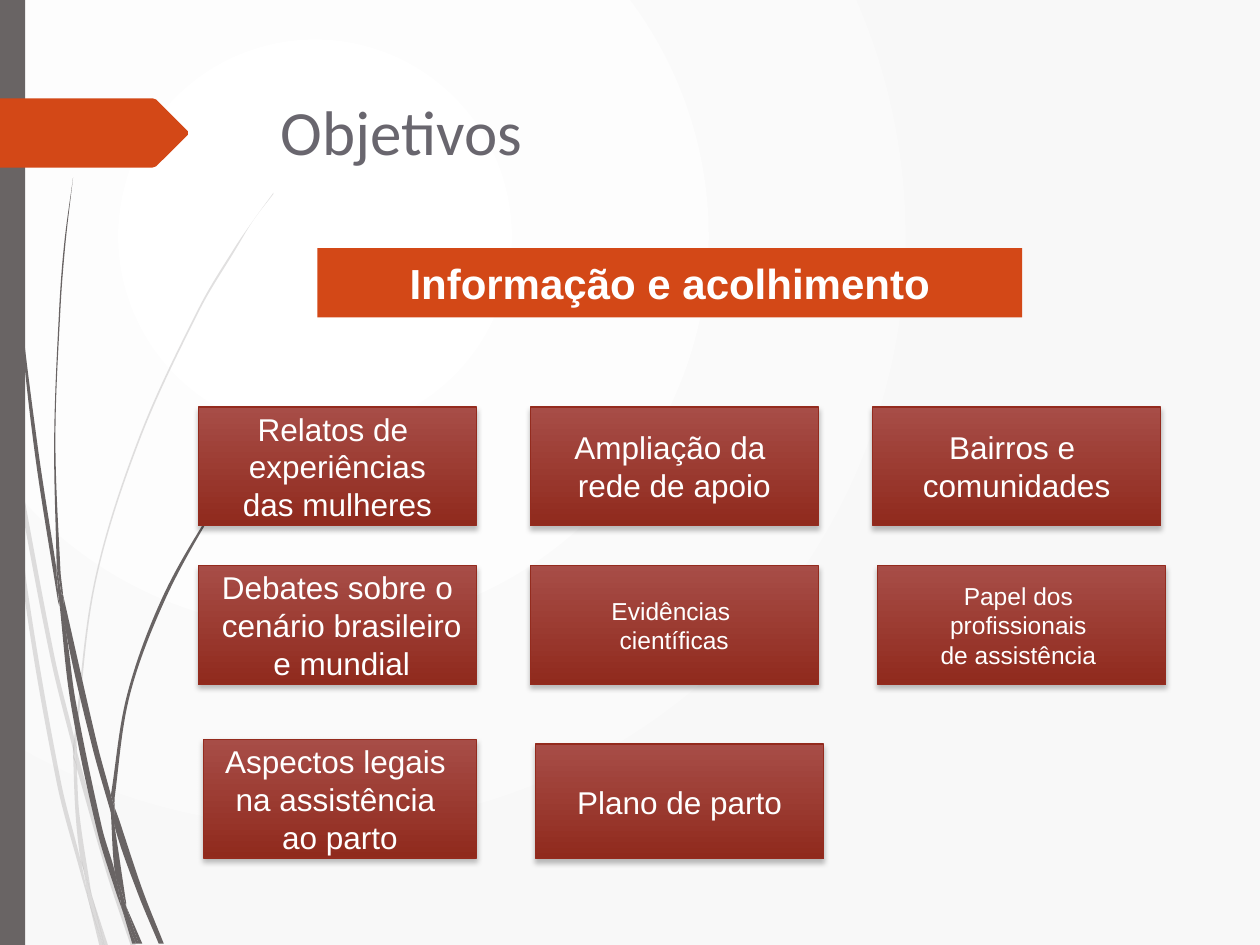
from dataclasses import dataclass

from lxml.etree import SubElement
from pptx import Presentation
from pptx.dml.color import RGBColor
from pptx.enum.shapes import MSO_SHAPE
from pptx.enum.text import MSO_ANCHOR, PP_ALIGN
from pptx.oxml.ns import qn
from pptx.util import Pt

COLORS = {
    "white": "FFFFFF", "mist": "F8F8F8", "gray": "696464", "orange": "D34817",
    "rose": "A74D47", "wine": "902A1D", "edge": "942B1E", "title": "69666E",
    "black": "000000",
}
UNIT = Pt(0.72)  # one outline step

Edge = list[tuple[int, int]]


@dataclass
class Card:
    left: float
    top: float
    width: float
    height: float
    text: str
    size: int = 18


# Each blade of grass is a pair of smooth edges, there and back
PALE: list[list[Edge]] = [
    [[(8, 350), (6, 322), (0, 282)], [(0, 299), (7, 344), (8, 350)]],
    [[(12, 376), (40, 522), (59, 599)], [(59, 586), (43, 520), (10, 345)]],
    [[(61, 610), (85, 694), (104, 751)], [(108, 751), (88, 692), (64, 607), (61, 596)]],
    [[(73, 711), (83, 751)], [(86, 751), (73, 711)]],
    [[(8, 350), (19, 470), (45, 621), (64, 693), (70, 714)],
     [(69, 707), (64, 683), (48, 619), (22, 469), (12, 376), (8, 350)]],
    [[(58, 599), (60, 646), (64, 683), (67, 692), (73, 711)],
     [(72, 706), (63, 646), (61, 610), (61, 608), (58, 599)]],
    [[(61, 596), (61, 584), (76, 462), (111, 349), (159, 245), (187, 198), (201, 175),
      (217, 154)],
     [(217, 153), (201, 175), (186, 197), (158, 244), (110, 348), (75, 461), (59, 584),
      (59, 586)]],
    [[(70, 714), (79, 751)], [(82, 751), (70, 714)]],
    [[(59, 586), (58, 599), (61, 608)], [(61, 610), (61, 596), (59, 586)]],
    [[(65, 683), (69, 707), (70, 714), (82, 751)], [(83, 751), (73, 711), (67, 692)]],
]
DARK: list[list[Edge]] = [
    [[(2, 0), (3, 48), (5, 110), (14, 233), (27, 355), (46, 477), (47, 481)],
     [(45, 457), (45, 453), (30, 355), (15, 232), (6, 109), (4, 48), (3, 0)]],
    [[(50, 472), (53, 505), (73, 592), (88, 645)],
     [(88, 633), (88, 631), (77, 590), (50, 472)]],
    [[(91, 641), (91, 656), (109, 708), (126, 749)],
     [(130, 749), (113, 706), (94, 649), (91, 641)]],
    [[(47, 477), (56, 557), (77, 659), (92, 708), (97, 722)],
     [(96, 717), (91, 691), (81, 657), (60, 556), (53, 505), (47, 477)]],
    [[(45, 449), (43, 349), (47, 245), (51, 193), (58, 141)],
     [(58, 141), (52, 193), (48, 245), (44, 349), (48, 453), (50, 472), (49, 472)]],
    [[(100, 719), (110, 749)], [(113, 749), (100, 719)]],
    [[(45, 449), (45, 453), (47, 477), (53, 505)], [(50, 472), (49, 472), (45, 449)]],
    [[(91, 641), (91, 633), (103, 552), (131, 476), (169, 406), (191, 374), (203, 359),
      (216, 344)],
     [(215, 344), (203, 358), (191, 373), (168, 405), (129, 474), (101, 551), (88, 631)]],
    [[(97, 722), (105, 749)], [(108, 749), (97, 722)]],
    [[(88, 645), (91, 691), (96, 706), (100, 719)],
     [(100, 716), (91, 656), (90, 651), (88, 645)]],
    [[(88, 631), (88, 645), (91, 656)], [(91, 641), (88, 631)]],
    [[(91, 691), (96, 717), (97, 722), (108, 749)],
     [(110, 749), (100, 719), (96, 706), (91, 691)]],
]
ARROW: list[Edge] = [
    [(0, 78), (121, 78)], [(124, 79), (149, 104)],
    [(149, 107), (124, 132)], [(121, 133), (0, 133)],
]

ROWS = (232.5, 323.3)
COLS = (113.4, 303, 498.6)
SLIM, WIDE, HIGH = 158.8, 164.6, 67.9
CARDS = [
    Card(COLS[2], ROWS[0], WIDE, HIGH, "Bairros e \ncomunidades"),
    Card(COLS[1], ROWS[0], WIDE, HIGH, "Ampliação da \nrede de apoio"),
    Card(COLS[0], ROWS[1], SLIM, HIGH, "Debates sobre o\n cenário brasileiro\n e mundial"),
    Card(COLS[1], ROWS[1], WIDE, HIGH, "Evidências \ncientíficas", 14),
    Card(501.6, ROWS[1], WIDE, HIGH, "Papel dos \nprofissionais \nde assistência ", 14),
    Card(116.2, 422.4, 156, HIGH, "Aspectos legais \nna assistência \nao parto"),
    Card(COLS[0], ROWS[0], SLIM, HIGH, "Relatos de \nexperiências\ndas mulheres"),
    Card(306, 425.2, WIDE, 65.5, "Plano de parto"),
]


def tint(name: str) -> RGBColor:
    return RGBColor.from_string(COLORS[name])


def blend(fill, first: str, last: str) -> None:
    fill.gradient()
    for stop, name in zip(fill.gradient_stops, (first, last)):
        stop.color.rgb = tint(name)


def bend(edge: Edge) -> list[list[complex]]:
    """Two handles and an end for each curve through the points of an edge."""
    knots = [complex(*point) * UNIT for point in edge]
    last = len(knots) - 1
    slopes = []
    for i in range(last + 1):
        chord = knots[min(i + 1, last)] - knots[max(i - 1, 0)]
        slopes.append(chord / abs(chord))
    spans = []
    for i in range(last):
        start, end = knots[i], knots[i + 1]
        reach = abs(end - start) / 3
        spans.append([start + slopes[i] * reach, end - slopes[i + 1] * reach, end])
    return spans


def outline(slide, edges: list[Edge], color: str, alpha: int = 100) -> None:
    dots = [(x * UNIT, y * UNIT) for edge in edges for x, y in edge]
    pen = slide.shapes.build_freeform(*dots[0])
    pen.add_line_segments(dots[1:])
    shape = pen.convert_to_shape()
    paint(shape, color)
    # Round the edges; the joins between them stay straight
    corner = complex(shape.left, shape.top)
    lines = iter(list(shape.element.spPr.iter(qn("a:lnTo"))))
    for i, edge in enumerate(edges):
        if i:
            next(lines)
        for span in bend(edge):
            line = next(lines)
            if len(edge) == 2:
                continue
            curve = SubElement(line.getparent(), qn("a:cubicBezTo"))
            for spot in span:
                place = spot - corner
                SubElement(curve, qn("a:pt"), x=str(round(place.real)),
                           y=str(round(place.imag)))
            line.getparent().replace(line, curve)
    if alpha < 100:
        rgb = next(shape.element.spPr.iter(qn("a:srgbClr")))
        SubElement(rgb, qn("a:alpha"), val=str(alpha * 1000))


def paint(shape, color: str) -> None:
    shape.shadow.inherit = False
    shape.fill.solid()
    shape.fill.fore_color.rgb = tint(color)
    shape.line.fill.background()


def block(slide, left: float, top: float, width: float, height: float):
    return slide.shapes.add_shape(
        MSO_SHAPE.RECTANGLE, Pt(left), Pt(top), Pt(width), Pt(height))


def write(shape, text: str, size: int, face: str, color: str,
          align=PP_ALIGN.CENTER, bold: bool = False) -> None:
    frame = shape.text_frame
    frame.text = text
    frame.word_wrap = False
    for line in frame.paragraphs:
        line.alignment = align
        for run in line.runs:
            run.font.size, run.font.name, run.font.bold = Pt(size), face, bold
            run.font.color.rgb = tint(color)


def draw(slide, card: Card) -> None:
    shape = block(slide, card.left, card.top, card.width, card.height)
    blend(shape.fill, "rose", "wine")
    shape.fill.gradient_angle = 270
    shape.line.color.rgb = tint("edge")
    shape.line.width = Pt(0.75)
    # Soft shadow below the card
    shape.shadow.inherit = False
    effects = shape.element.spPr.find(qn("a:effectLst"))
    shade = SubElement(effects, qn("a:outerShdw"), blurRad=str(Pt(3)), dist=str(Pt(2)),
                       dir="5400000", rotWithShape="0")
    rgb = SubElement(shade, qn("a:srgbClr"), val=COLORS["black"])
    SubElement(rgb, qn("a:alpha"), val="25000")
    shape.text_frame.vertical_anchor = MSO_ANCHOR.MIDDLE
    write(shape, card.text, card.size, "Arial", "white")


def main() -> None:
    deck = Presentation()
    deck.slide_width, deck.slide_height = Pt(720), Pt(540)
    slide = deck.slides.add_slide(deck.slide_layouts[6])

    # Circular background blend
    blend(slide.background.fill, "white", "mist")
    line = next(slide.element.iter(qn("a:lin")))
    ring = SubElement(line.getparent(), qn("a:path"), path="circle")
    SubElement(ring, qn("a:fillToRect"), l="50000", t="50000", r="100000", b="100000")
    line.getparent().remove(line)

    # Grass, side bar and arrow
    for blade in PALE:
        outline(slide, blade, "gray", 20)
    for blade in DARK:
        outline(slide, blade, "gray")
    paint(block(slide, 0, 0, 14.4, 540), "gray")
    outline(slide, ARROW, "orange")

    # Banner and cards
    banner = block(slide, 181.4, 141.8, 402.7, 39.6)
    paint(banner, "orange")
    write(banner, "Informação e acolhimento", 24, "Arial", "white", bold=True)
    for card in CARDS:
        draw(slide, card)

    # Title
    title = slide.shapes.add_textbox(Pt(153.4), Pt(49.2), Pt(672.5 - 153.4), Pt(100.8))
    write(title, "Objetivos", 36, "Calibri", "title", PP_ALIGN.LEFT)
    title.text_frame.word_wrap = True

    deck.save("out.pptx")


if __name__ == "__main__":
    main()
